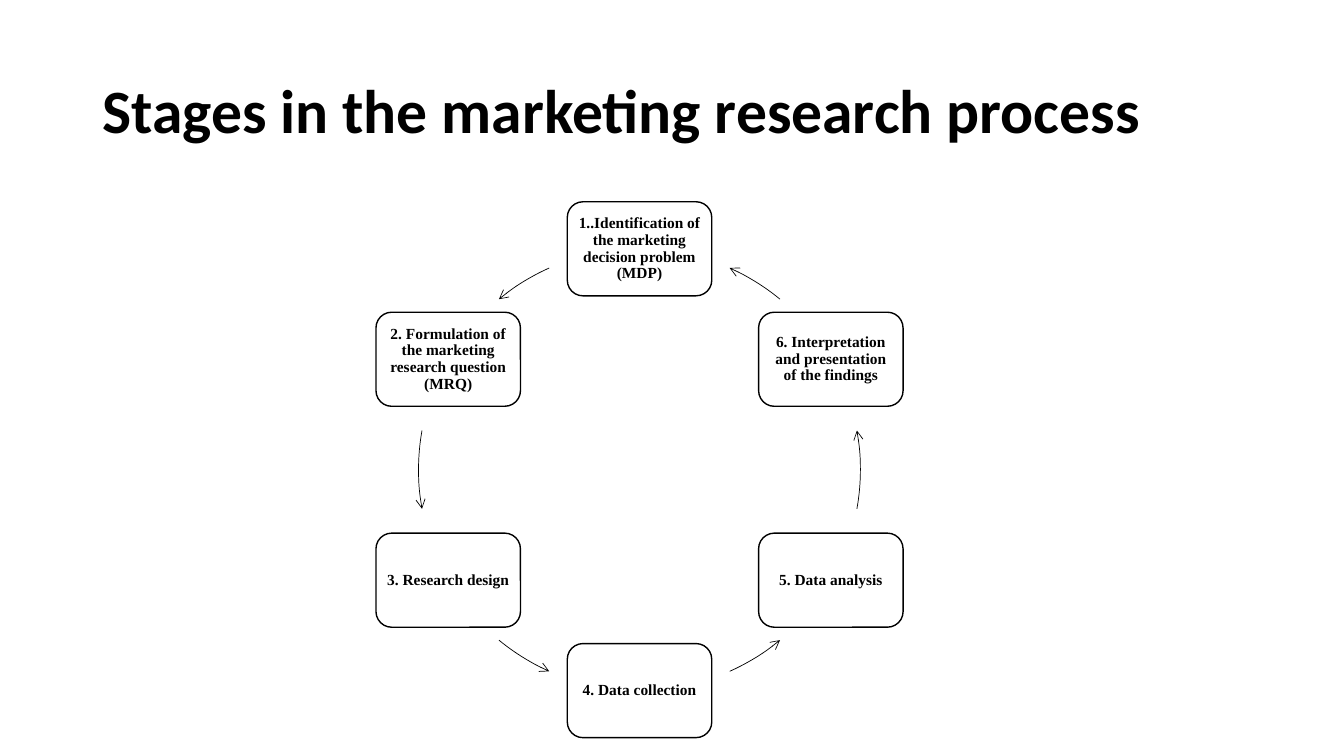
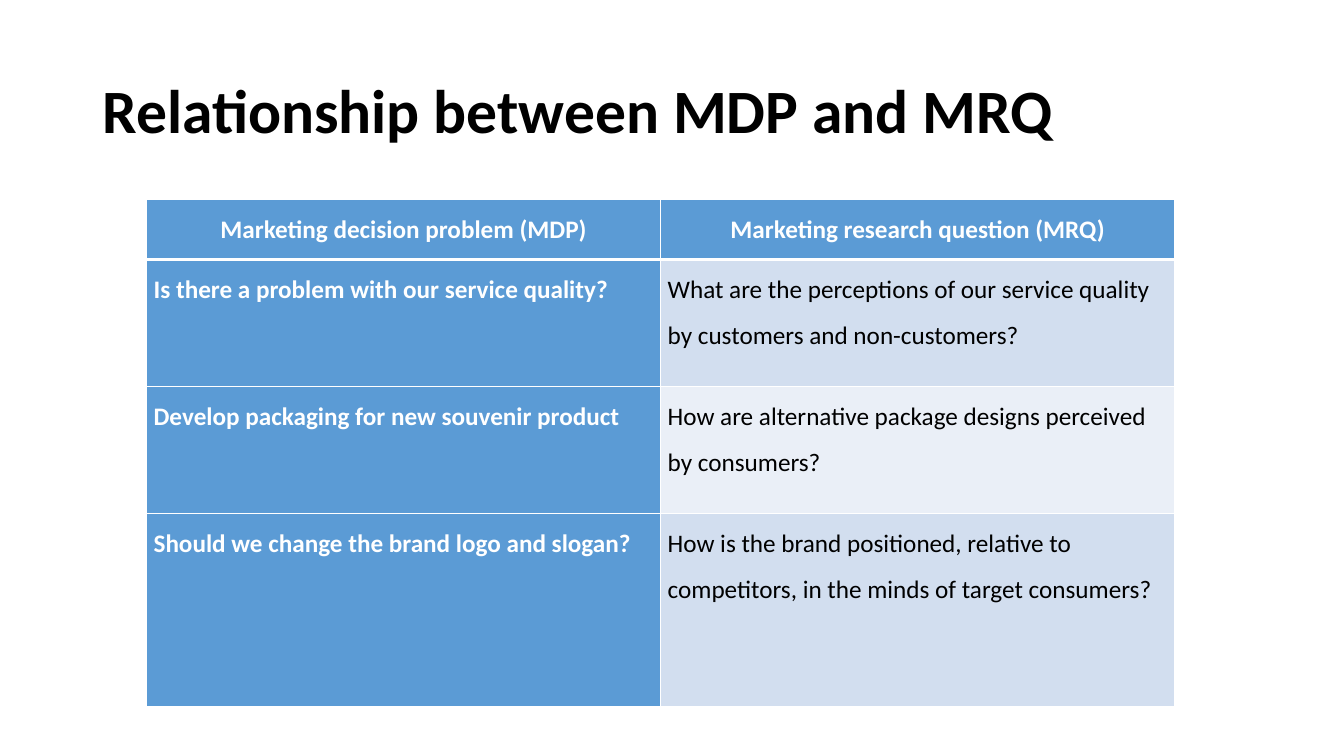
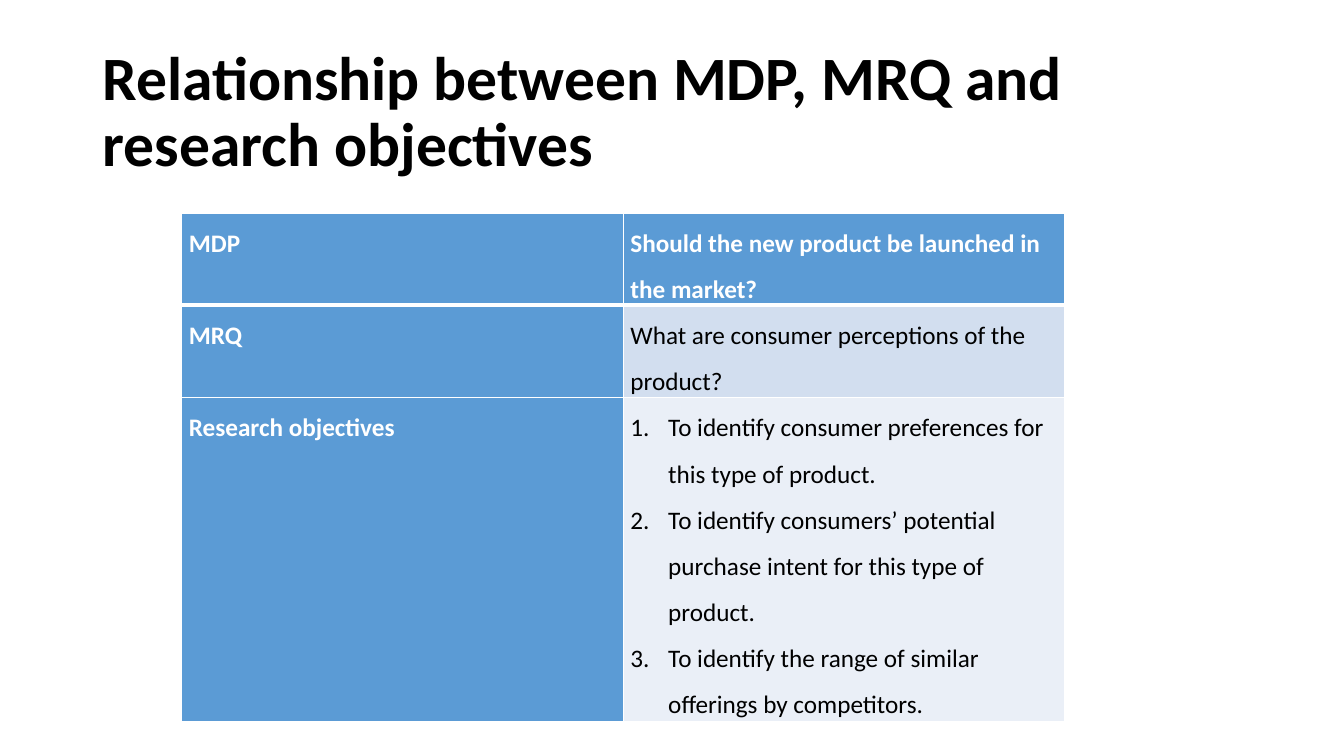
from math import cos, radians, sin

from lxml.etree import SubElement
from pptx import Presentation
from pptx.dml.color import RGBColor
from pptx.enum.shapes import MSO_SHAPE
from pptx.enum.text import MSO_ANCHOR, MSO_AUTO_SIZE, PP_ALIGN
from pptx.oxml.ns import qn
from pptx.util import Pt

COLORS = {
    "text": "000000",
    "white": "FFFFFF",
    "accent": "5B9BD5",
    "band_dark": "D2DEEF",
    "band_light": "EAEFF7",
}
BODY_FONT = "Calibri"
STAGE_FONT = "Times New Roman"

RING_X, RING_Y, RING_RADIUS = 456.8, 335.5, 157.8
BOX_W, BOX_H = 103.2, 67.2
ARC_ANGLE_UNIT = 0.6  # one degree, as an adjustment value

STAGES = [
    "1..Identification of the marketing decision problem (MDP)",
    "2. Formulation of the marketing research question (MRQ)",
    "3. Research design",
    "4. Data collection",
    "5. Data analysis",
    "6. Interpretation and presentation of the findings",
]
# Degrees counterclockwise from the top of the ring, one arc per gap
ARCS = [(24.1, 39.5), (79.8, 100.2), (140.5, 155.9),
        (204.1, 219.5), (259.8, 280.2), (320.5, 335.9)]

MDP_MRQ_ROWS = [
    ["Marketing decision problem (MDP)", "Marketing research question (MRQ)"],
    ["Is there a problem with our service quality?",
     "What are the perceptions of our service quality by customers and non-customers?"],
    ["Develop packaging for new souvenir product",
     "How are alternative package designs perceived by consumers?"],
    ["Should we change the brand logo and slogan?",
     "How is the brand positioned, relative to competitors, in the minds of target consumers?"],
]
OBJECTIVES_ROWS = [
    ["MDP", "Should the new product be launched in the market?"],
    ["MRQ", "What are consumer perceptions of the product?"],
    ["Research objectives", [
        "To identify consumer preferences for this type of product.",
        "To identify consumers’ potential purchase intent for this type of product.",
        "To identify the range of similar offerings by competitors.",
    ]],
]


def rgb(name):
    return RGBColor.from_string(COLORS[name])


def format_paragraph(p, font, size, color, bold, spacing, align=PP_ALIGN.LEFT):
    p.alignment = align
    p.line_spacing = spacing
    p.font.name = font
    p.font.size = Pt(size)
    p.font.bold = bold
    p.font.color.rgb = rgb(color)


def title_layout(prs):
    """Place the shared title on the Title Only layout and return the layout."""
    layout = prs.slide_layouts[5]
    title = layout.placeholders[0]
    title.left, title.top, title.width, title.height = Pt(66), Pt(28.8), Pt(828), Pt(104.4)
    return layout


def add_slide(prs, layout, text):
    slide = prs.slides.add_slide(layout)
    tf = slide.shapes.title.text_frame
    tf.text = text
    tf.auto_size = MSO_AUTO_SIZE.NONE
    tf.vertical_anchor = MSO_ANCHOR.MIDDLE
    format_paragraph(tf.paragraphs[0], BODY_FONT, 44, "text", True, 0.9)
    return slide


def add_outline(slide, kind, x, y, width, height, line_width):
    """Add a black-outlined preset shape centred on a point."""
    sp = slide.shapes.add_shape(kind, Pt(x - width / 2), Pt(y - height / 2),
                                Pt(width), Pt(height))
    sp.shadow.inherit = False
    sp.line.color.rgb = rgb("text")
    sp.line.width = Pt(line_width)
    return sp


def add_stage(slide, text, angle):
    """Add a stage box on the ring, at degrees counterclockwise from the top."""
    a = radians(angle)
    sp = add_outline(slide, MSO_SHAPE.ROUNDED_RECTANGLE, RING_X - RING_RADIUS * sin(a),
                     RING_Y - RING_RADIUS * cos(a), BOX_W, BOX_H, 1)
    sp.fill.solid()
    sp.fill.fore_color.rgb = rgb("white")
    tf = sp.text_frame
    tf.word_wrap = True
    tf.vertical_anchor = MSO_ANCHOR.MIDDLE
    tf.margin_left = tf.margin_right = tf.margin_top = tf.margin_bottom = Pt(3.3)
    tf.text = text
    format_paragraph(tf.paragraphs[0], STAGE_FONT, 11, "text", True, 0.9, PP_ALIGN.CENTER)


def add_arc_arrow(slide, start, end):
    """Add a counterclockwise arrow along the ring."""
    sp = add_outline(slide, MSO_SHAPE.ARC, RING_X, RING_Y,
                     2 * RING_RADIUS, 2 * RING_RADIUS, 0.5)
    sp.fill.background()
    # The preset runs clockwise from the right, so its head is the arrow's end
    for i, angle in enumerate((end, start)):
        sp.adjustments[i] = (270 - angle) % 360 * ARC_ANGLE_UNIT
    SubElement(sp.line._get_or_add_ln(), qn("a:headEnd"), type="arrow")


def set_borders(cell, row):
    """Draw white cell borders, with a thick rule below the header row."""
    widths = {"L": 1, "R": 1, "T": 3 if row == 1 else 1, "B": 3 if row == 0 else 1}
    tc_pr = cell._tc.get_or_add_tcPr()
    for side, width in widths.items():
        ln = SubElement(tc_pr, qn(f"a:ln{side}"), w=str(Pt(width)))
        fill = SubElement(ln, qn("a:solidFill"))
        SubElement(fill, qn("a:srgbClr"), val=COLORS["white"])


def number_paragraph(p):
    p_pr = p._p.get_or_add_pPr()
    p_pr.set("marL", str(Pt(27)))
    p_pr.set("indent", str(Pt(-27)))
    # Bullet properties must precede the default run properties
    def_rpr = p_pr.find(qn("a:defRPr"))
    SubElement(p_pr, qn("a:buFont"), typeface="+mj-lt")
    SubElement(p_pr, qn("a:buAutoNum"), type="arabicPeriod")
    if def_rpr is not None:
        p_pr.append(def_rpr)


def fill_cell(cell, content, row, col, align):
    """Write a string, or a list as numbered paragraphs, and style the cell."""
    heading = row == 0 or col == 0
    band = "band_dark" if row % 2 else "band_light"
    set_borders(cell, row)
    cell.fill.solid()
    cell.fill.fore_color.rgb = rgb("accent" if heading else band)
    cell.margin_left = cell.margin_right = Pt(5.04)
    cell.margin_top = cell.margin_bottom = Pt(0)
    numbered = isinstance(content, list)
    tf = cell.text_frame
    tf.text = "\n".join(content) if numbered else content
    for p in tf.paragraphs:
        format_paragraph(p, BODY_FONT, 18, "white" if heading else "text",
                         heading, 1.5, align)
        if numbered:
            number_paragraph(p)


def add_table(slide, rows, left, top, col_width, heights, header_align=PP_ALIGN.LEFT):
    columns = len(rows[0])
    table = slide.shapes.add_table(len(rows), columns, Pt(left), Pt(top),
                                   Pt(col_width * columns), Pt(sum(heights))).table
    table.horz_banding = False
    table.first_col = True
    for column in table.columns:
        column.width = Pt(col_width)
    for i, (contents, height) in enumerate(zip(rows, heights)):
        table.rows[i].height = Pt(height)
        align = header_align if i == 0 else PP_ALIGN.LEFT
        for j, content in enumerate(contents):
            fill_cell(table.cell(i, j), content, i, j, align)


def main():
    prs = Presentation()
    prs.slide_width, prs.slide_height = Pt(960), Pt(540)
    layout = title_layout(prs)

    slide = add_slide(prs, layout, "Stages in the marketing research process")
    for i, (stage, arc) in enumerate(zip(STAGES, ARCS)):
        add_stage(slide, stage, i * 360 / len(STAGES))
        add_arc_arrow(slide, *arc)

    slide = add_slide(prs, layout, "Relationship between MDP and MRQ")
    add_table(slide, MDP_MRQ_ROWS, 104.7, 142.5, 367.2, [42.8, 90.7, 90.7, 138.2],
              PP_ALIGN.CENTER)

    slide = add_slide(prs, layout, "Relationship between MDP, MRQ and research objectives")
    add_table(slide, OBJECTIVES_ROWS, 129.9, 152.2, 315.4, [63.4, 63.4, 231.1])

    prs.save("out.pptx")


if __name__ == "__main__":
    main()
